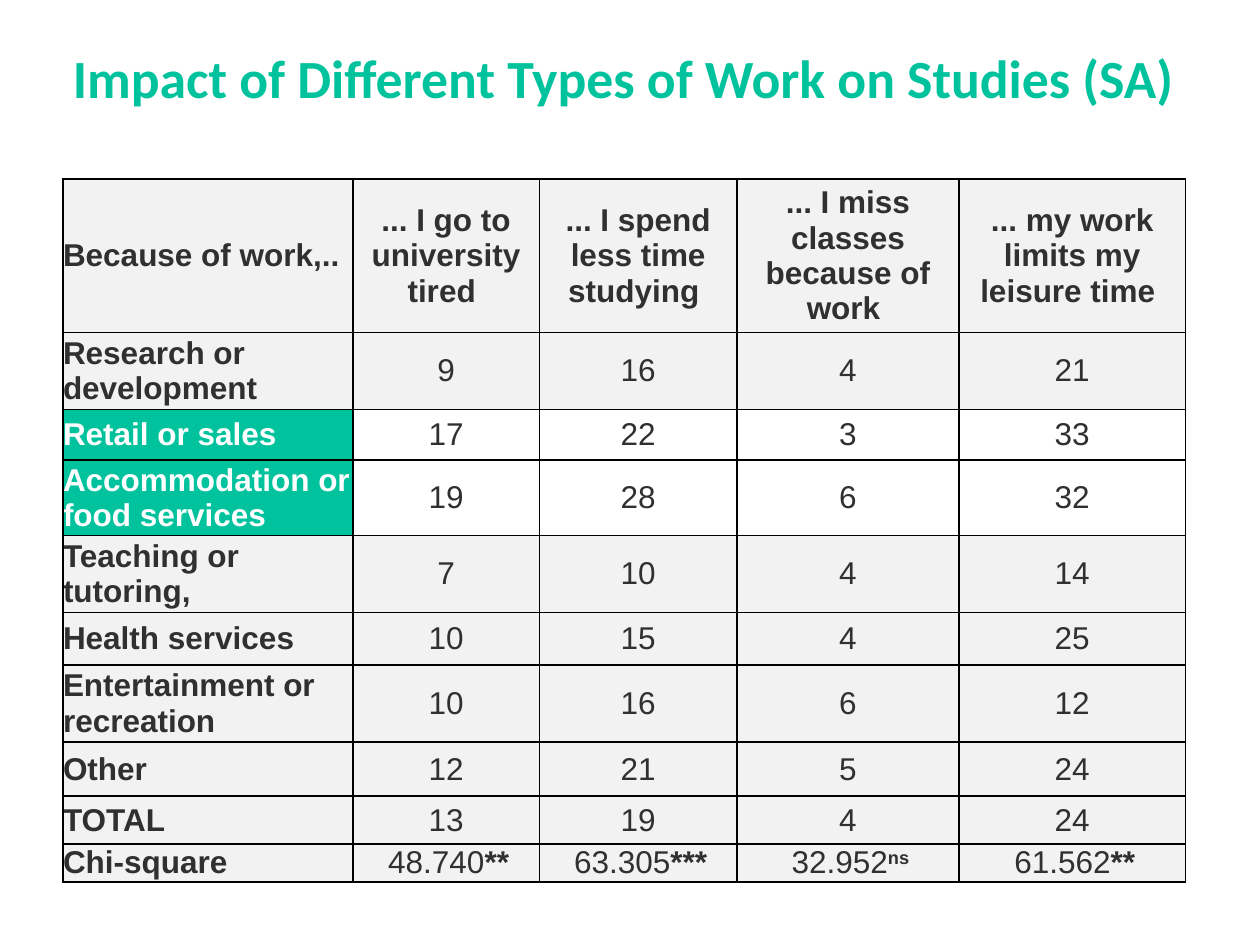
from dataclasses import dataclass

from lxml import etree
from pptx import Presentation
from pptx.dml import color
from pptx.enum import text
from pptx.oxml import ns
from pptx.util import Inches, Pt

GREEN, DARK, WHITE, GREY, BLACK = "00C29D", "303030", "FFFFFF", "F2F2F2", "000000"
LEFT, CENTER = text.PP_ALIGN.LEFT, text.PP_ALIGN.CENTER


@dataclass
class WorkType:
    label: str
    percentages: tuple
    height: float
    highlighted: bool = False


@dataclass
class ChiSquare:
    value: str
    significance: str
    superscript: bool = False


HEADINGS = (
    "Because of work,..",
    "... I go to university tired ",
    "... I spend less time studying ",
    "... I miss classes because of work ",
    "... my work limits my leisure time ",
)
COLUMN_WIDTHS = (2.3, 1.48, 1.57, 1.76, 1.8)
HEADING_HEIGHT, CHI_HEIGHT = 1.22, 0.3
WORK_TYPES = (
    WorkType("Research or development", (9, 16, 4, 21), 0.61),
    WorkType("Retail or sales", (17, 22, 3, 33), 0.4, True),
    WorkType("Accommodation or food services", (19, 28, 6, 32), 0.52, True),
    WorkType("Teaching or tutoring,", (7, 10, 4, 14), 0.61),
    WorkType("Health services", (10, 15, 4, 25), 0.42),
    WorkType("Entertainment or recreation", (10, 16, 6, 12), 0.61),
    WorkType("Other", (12, 21, 5, 24), 0.43),
    WorkType("TOTAL", (13, 19, 4, 24), 0.38),
)
CHI_SQUARES = (
    ChiSquare("48.740", "**"),
    ChiSquare("63.305", "***"),
    ChiSquare("32.952", "ns", True),
    ChiSquare("61.562", "**"),
)


def rgb(value: str) -> color.RGBColor:
    return color.RGBColor.from_string(value)


def add_text(paragraph, content: str, *, size=18, font="Arial", ink=DARK,
             bold=False, align=CENTER, superscript=False) -> None:
    paragraph.alignment = align
    run = paragraph.add_run()
    run.text = content
    run.font.size, run.font.name, run.font.bold = Pt(size), font, bold
    run.font.color.rgb = rgb(ink)
    if superscript:
        run.font._element.set("baseline", "30000")


def add_borders(cell) -> None:
    properties = cell._tc.get_or_add_tcPr()
    for position, side in enumerate(("lnL", "lnR", "lnT", "lnB")):
        border = etree.Element(ns.qn(f"a:{side}"), w=str(Pt(1)))
        solid = etree.SubElement(border, ns.qn("a:solidFill"))
        etree.SubElement(solid, ns.qn("a:srgbClr"), val=BLACK)
        properties.insert(position, border)


def style_cell(cell, fill: str | None = GREY):
    """Format the cell and return its paragraph."""
    cell.margin_left = cell.margin_right = cell.margin_top = cell.margin_bottom = 0
    cell.vertical_anchor = text.MSO_ANCHOR.MIDDLE
    if fill:
        cell.fill.solid()
        cell.fill.fore_color.rgb = rgb(fill)
    else:
        cell.fill.background()
    add_borders(cell)
    return cell.text_frame.paragraphs[0]


def add_title(slide) -> None:
    title = slide.shapes.add_textbox(Inches(0.25), Inches(0.3), Inches(9.5), Inches(0.62))
    frame = title.text_frame
    frame.word_wrap = True
    frame.vertical_anchor = text.MSO_ANCHOR.MIDDLE
    frame.margin_left = frame.margin_right = Inches(0.05)
    add_text(frame.paragraphs[0], "Impact of Different Types of Work on Studies (SA) ",
             size=30.7, font="Calibri", ink=GREEN, bold=True)


def add_impact_table(slide) -> None:
    heights = (HEADING_HEIGHT, *(work.height for work in WORK_TYPES), CHI_HEIGHT)
    table = slide.shapes.add_table(
        len(heights), len(HEADINGS), Inches(0.5), Inches(1.42),
        Inches(sum(COLUMN_WIDTHS)), Inches(sum(heights))).table
    table.first_row = table.horz_banding = False
    for column, width in zip(table.columns, COLUMN_WIDTHS):
        column.width = Inches(width)
    for row, height in zip(table.rows, heights):
        row.height = Inches(height)

    # Headings
    for column, heading in enumerate(HEADINGS):
        add_text(style_cell(table.cell(0, column)), heading, bold=True,
                 align=CENTER if column else LEFT)

    # Percentages for each type of work
    for row, work in enumerate(WORK_TYPES, start=1):
        label = style_cell(table.cell(row, 0), GREEN if work.highlighted else GREY)
        add_text(label, work.label, bold=True, align=LEFT,
                 ink=WHITE if work.highlighted else DARK)
        for column, percentage in enumerate(work.percentages, start=1):
            value = style_cell(table.cell(row, column), None if work.highlighted else GREY)
            add_text(value, str(percentage))

    # Chi-square tests
    last = len(heights) - 1
    add_text(style_cell(table.cell(last, 0)), "Chi-square", bold=True, align=LEFT)
    for column, chi in enumerate(CHI_SQUARES, start=1):
        result = style_cell(table.cell(last, column))
        add_text(result, chi.value)
        add_text(result, chi.significance, bold=True, superscript=chi.superscript)
        result._p.get_or_add_pPr().set("indent", str(Inches(0.04)))


def main() -> None:
    presentation = Presentation()
    presentation.slide_width, presentation.slide_height = Inches(10), Inches(7.5)
    slide = presentation.slides.add_slide(presentation.slide_layouts[6])
    add_title(slide)
    add_impact_table(slide)
    presentation.save("out.pptx")


if __name__ == "__main__":
    main()
